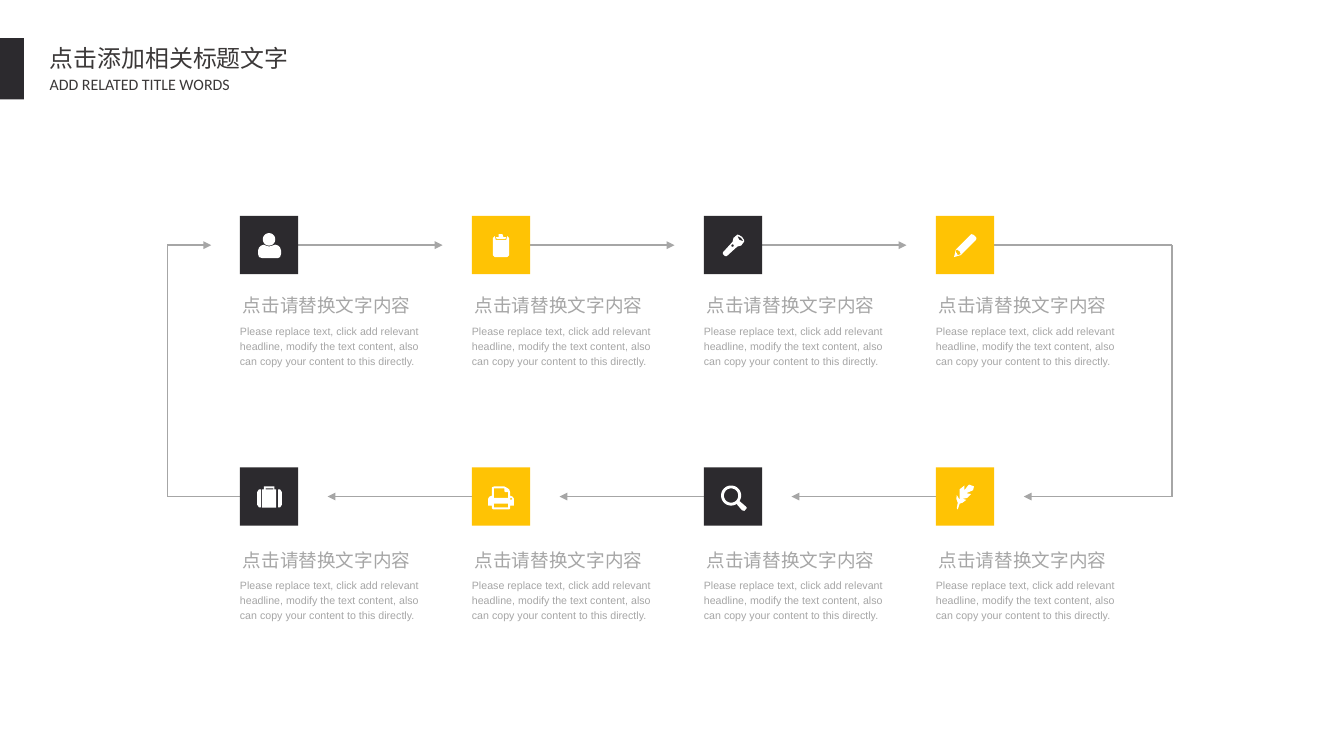
import math

from lxml import etree
from pptx import Presentation, util as u
from pptx.dml.color import RGBColor
from pptx.enum import shapes, text
from pptx.oxml import ns

COLORS = {
    "dark": "2C2A2E",
    "accent": "FFC304",
    "gray": "A6A6A6",
    "title": "3B3838",
    "white": "FFFFFF",
}
TILE = 0.61
LEFT = 2.51
PITCH = 7.28 / 3
ARROW = 1.51
LOOP_LEFT, LOOP_RIGHT = 1.75, 12.26
HEADING = "点击请替换文字内容"
BODY = (
    "Please replace text, click add relevant headline, modify the text "
    "content, also can copy your content to this directly."
)


def circle(x, y, radius, steps=40):
    angles = [2 * math.pi * step / steps for step in range(steps)]
    return [(x + radius * math.cos(a), y + radius * math.sin(a)) for a in angles]


USER = [
    [circle(30.5, 24.5, 6.5)],
    [[(19, 36), (20, 33), (22, 31), (25, 30), (27, 31), (30.5, 32), (34, 31),
      (37, 30), (40, 31), (42, 33), (43, 36), (43, 40), (42, 43), (40, 44),
      (23, 44), (20, 43), (19, 40)]],
]
CLIPBOARD = [
    [[(37, 21), (36, 25), (25, 25), (24, 21), (22, 23), (22, 41), (24, 43),
      (37, 43), (39, 41), (39, 23)]],
    [[(35, 24), (36, 22), (33, 22), (32, 19), (28, 19), (28, 22), (25, 22),
      (26, 24)]],
]
FLASHLIGHT = [[
    [(40, 22), (37, 20), (35, 19.5), (31, 23), (30, 27), (20, 38), (20, 40),
     (22, 42), (24, 42), (35, 32), (39, 31), (42, 27), (42, 25)],
    [(37, 25), (35, 21), (39, 23), (41.5, 26.5)],
    circle(30, 31, 1.3),
]]
PENCIL = [[
    [(41, 21), (39, 19.5), (37, 19), (21, 35), (19, 43), (26, 41), (42, 25),
     (42.5, 23)],
    [(26, 40), (23, 41), (22, 39), (21, 38), (21, 36), (22, 35), (25, 37)],
]]
SUITCASE = [
    [[(22, 23), (20, 23), (18, 26), (18, 39), (20, 42), (22, 42)]],
    [[(25, 20), (36, 20), (36, 23), (38, 23), (38, 42), (23, 42), (23, 23),
      (25, 23)],
     [(27, 22), (35, 22), (35, 23), (27, 23)]],
    [[(40, 23), (42, 23), (44, 26), (44, 39), (42, 42), (40, 42)]],
]
PRINTER = [[
    [(43, 31), (41, 30), (40, 30), (40, 26), (39, 23), (36, 21), (34, 20),
     (23, 20), (21, 21), (21, 30), (20, 30), (18, 31), (17, 33), (17, 40),
     (21, 40), (21, 43), (22, 44), (39, 44), (40, 43), (40, 40), (44, 40),
     (44, 33)],
    [(38, 32), (23, 32), (23, 22), (34, 22), (34, 25), (35, 26), (38, 26)],
    [(38, 42), (23, 42), (23, 38), (38, 38)],
    circle(41, 33, 1),
]]
SEARCH = [
    [circle(28.5, 29.5, 10.5), circle(28.5, 29.5, 7.5)],
    [[(37, 35), (44, 41), (45, 42.5), (42.5, 45.5), (40, 45), (34, 38)]],
]
FEATHER = [[
    [(23, 44), (25, 38), (28, 37), (32, 34), (28, 33), (33, 32), (37, 28),
     (32, 27), (39, 24), (40, 20), (35, 18), (33, 20), (30, 24), (30, 19),
     (25, 23), (25, 34), (22, 29), (21.5, 33), (23, 37), (22, 43)],
]]
ROWS = [
    (2.26, 3.03, 3.37, [USER, CLIPBOARD, FLASHLIGHT, PENCIL]),
    (4.89, 5.7, 6.03, [SUITCASE, PRINTER, SEARCH, FEATHER]),
]


def write(frame, content, size=12, font="Arial", color="gray", spacing=1.0):
    paragraph = frame.paragraphs[0]
    paragraph.line_spacing = spacing
    run = paragraph.add_run()
    run.text = content
    run.font.size = u.Pt(size)
    run.font.name = font
    run.font.color.rgb = RGBColor.from_string(COLORS[color])


class Deck:
    def __init__(self, width, height):
        self.presentation = Presentation()
        self.presentation.slide_width = u.Inches(width)
        self.presentation.slide_height = u.Inches(height)
        layout = self.presentation.slide_layouts[6]
        self.slide = self.presentation.slides.add_slide(layout)

    def paint(self, shape, color):
        shape.shadow.inherit = False
        shape.fill.solid()
        shape.fill.fore_color.rgb = RGBColor.from_string(COLORS[color])
        shape.line.fill.background()

    def rectangle(self, left, top, width, height, color, parent=None):
        shape = (parent or self.slide).shapes.add_shape(
            shapes.MSO_SHAPE.RECTANGLE,
            *map(u.Inches, (left, top, width, height)))
        self.paint(shape, color)

    def outline(self, left, top, contours, parent):
        scaled = [[(x * 10, y * 10) for x, y in contour] for contour in contours]
        builder = parent.shapes.build_freeform(*scaled[0][0], u.Inches(0.001))
        builder.add_line_segments(scaled[0][1:])
        for contour in scaled[1:]:
            builder.move_to(*contour[0])
            builder.add_line_segments(contour[1:])
        self.paint(builder.convert_to_shape(u.Inches(left), u.Inches(top)), "white")

    def tile(self, left, top, color, icon):
        group = self.slide.shapes.add_group_shape()
        self.rectangle(left, top, TILE, TILE, color, group)
        for contours in icon:
            self.outline(left, top, contours, group)

    def line(self, start, end, arrow=False):
        connector = self.slide.shapes.add_connector(
            shapes.MSO_CONNECTOR.STRAIGHT, *map(u.Inches, (*start, *end)))
        connector.line.width = u.Pt(1)
        connector.line.color.rgb = RGBColor.from_string(COLORS["gray"])
        if arrow:
            outline = connector.line._get_or_add_ln()
            etree.SubElement(outline, ns.qn("a:tailEnd"), type="triangle")
        etree.SubElement(connector._element.spPr, ns.qn("a:effectLst"))

    def route(self, *points):
        for index in range(1, len(points)):
            self.line(points[index - 1], points[index], index == len(points) - 1)

    def label(self, left, top, width, height, content, inset=(0, 0), wrap=True,
              **style):
        box = self.slide.shapes.add_textbox(
            *map(u.Inches, (left, top, width, height)))
        frame = box.text_frame
        frame.margin_left = frame.margin_right = u.Inches(inset[0])
        frame.margin_top = frame.margin_bottom = u.Inches(inset[1])
        frame.word_wrap = wrap
        frame.auto_size = text.MSO_AUTO_SIZE.SHAPE_TO_FIT_TEXT
        write(frame, content, **style)


def main():
    deck = Deck(14.06, 7.91)
    deck.rectangle(0, 0.4, 0.25, 0.64, "dark")
    lefts = [LEFT + column * PITCH for column in range(4)]
    upper, lower = [row[0] + TILE / 2 for row in ROWS]

    for left in lefts[:-1]:
        deck.route((left + TILE, upper), (left + TILE + ARROW, upper))
    for left in lefts[1:]:
        deck.route((left, lower), (left - ARROW, lower))
    deck.route((lefts[-1] + TILE, upper), (LOOP_RIGHT, upper),
               (LOOP_RIGHT, lower), (10.71, lower))
    deck.route((LEFT, lower), (LOOP_LEFT, lower),
               (LOOP_LEFT, upper), (2.21, upper))

    for tile_top, heading_top, body_top, icons in ROWS:
        for column, (left, icon) in enumerate(zip(lefts, icons)):
            deck.tile(left, tile_top, ("dark", "accent")[column % 2], icon)
            deck.label(left, body_top, 2.02, 0.47, BODY, size=8, spacing=1.2)
            deck.label(left + 0.03, heading_top, 2.49, 0.26, HEADING, size=14,
                       spacing=1.2)

    heading = {"inset": (0.11, 0.05), "wrap": False, "color": "title"}
    deck.label(0.41, 0.41, 2.74, 0.41, "点击添加相关标题文字", size=18,
               font="Noto Sans CJK SC", **heading)
    deck.label(0.41, 0.73, 2.57, 0.31, "ADD RELATED TITLE WORDS", size=12,
               font="Calibri", **heading)
    deck.presentation.save("out.pptx")


if __name__ == "__main__":
    main()
